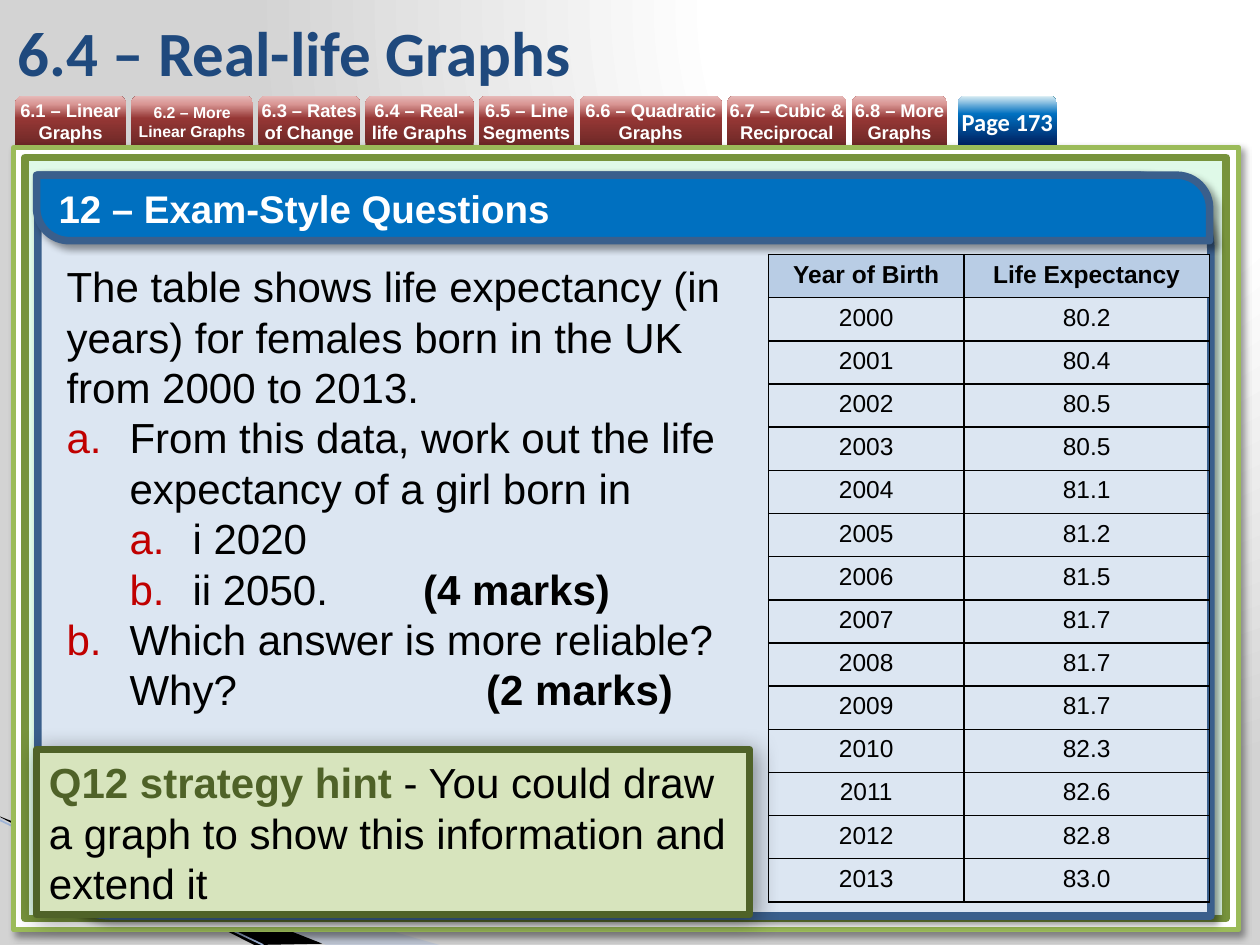
from lxml import etree
from pptx import Presentation
from pptx import util as u
from pptx.dml.color import RGBColor
from pptx.enum import shapes, text
from pptx.oxml import parse_xml
from pptx.oxml.ns import nsdecls, qn

WHITE = RGBColor(0xFF, 0xFF, 0xFF)
BLACK = RGBColor(0, 0, 0)
GREY = RGBColor(0xD3, 0xD3, 0xD3)
NAVY = RGBColor(0x1F, 0x49, 0x7D)
BLUE = RGBColor(0x00, 0x70, 0xC0)
EDGE_BLUE = RGBColor(0x3A, 0x5F, 0x8C)
PALE_BLUE = RGBColor(0xDC, 0xE6, 0xF2)
HEAD_BLUE = RGBColor(0xB9, 0xCD, 0xE5)
SWOOSH_BLUE = RGBColor(0xA7, 0xB9, 0xDB)
SWOOSH_EDGE = RGBColor(0x9E, 0xB3, 0xD6)
LIME = RGBColor(0x9B, 0xBB, 0x59)
OLIVE = RGBColor(0x77, 0x93, 0x3C)
MINT = RGBColor(0xDF, 0xF9, 0xE8)
HINT_FILL = RGBColor(0xD7, 0xE4, 0xBD)
HINT_EDGE = RGBColor(0x4F, 0x62, 0x28)
BULLET_RED = RGBColor(0xC0, 0, 0)
RED_STOPS = [(0, RGBColor(0x6F, 0x29, 0x27)), (54, RGBColor(0x95, 0x37, 0x35)),
             (83, RGBColor(0xD9, 0x96, 0x94)), (100, RGBColor(0xE6, 0xB9, 0xB8))]
BLUE_STOPS = [(0, RGBColor(0, 0x20, 0x60)), (63, BLUE), (100, RGBColor(0xDB, 0xEE, 0xF4))]
UPWARD = '<a:lin ang="16200000" scaled="0"/>'
FROM_TOP_RIGHT = '<a:path path="circle"><a:fillToRect l="65000" t="0" r="0" b="98000"/></a:path>'

KIND = shapes.MSO_SHAPE
MIDDLE = text.MSO_ANCHOR.MIDDLE
CENTER, LEFT = text.PP_ALIGN.CENTER, text.PP_ALIGN.LEFT

TAB_LEFT, TAB_TOP, TAB_HEIGHT, TAB_GAP = 0.12, 0.76, 0.39, 0.04
CHAPTER_TABS = [
    ("6.1 – Linear Graphs", 0.88, 10.5), ("6.2 – More Linear Graphs", 0.97, 9),
    ("6.3 – Rates of Change", 0.81, 10.5), ("6.4 – Real-life Graphs", 0.86, 10.5),
    ("6.5 – Line Segments", 0.76, 10.5), ("6.6 – Quadratic Graphs", 1.13, 10.5),
    ("6.7 – Cubic & Reciprocal", 0.95, 10.5), ("6.8 – More Graphs", 0.76, 10.5)]
# level (None for no number), tab stop, runs of (text, bold)
QUESTION = [
    (None, 5.44, [("The table shows life expectancy (in years) for females born "
                   "in the UK from 2000 to 2013.", False)]),
    (0, 5.44, [("From this data, work out the life expectancy of a girl born in", False)]),
    (1, 5.44, [("i 2020", False)]),
    (1, 5.94, [("ii 2050. \t", False), ("(4 marks)", True)]),
    (0, 5.94, [("Which answer is more reliable? \nWhy? \t", False), ("(2 marks)", True)])]
EXPECTANCY = [80.2, 80.4, 80.5, 80.5, 81.1, 81.2, 81.5,
              81.7, 81.7, 81.7, 82.3, 82.6, 82.8, 83.0]


def inches(*lengths):
    return [u.Inches(length) for length in lengths]


def apply(target, **formats):
    for name, value in formats.items():
        setattr(target, name, value)


def add_run(paragraph, words, size, color=BLACK, bold=False, name="Arial"):
    for index, line in enumerate(words.split("\n")):
        if index:
            paragraph.add_line_break()
        run = paragraph.add_run()
        run.text = line
        apply(run.font, size=u.Pt(size), bold=bold, name=name)
        run.font.color.rgb = color


def set_gradient(fill, holder, stops, direction):
    fill.solid()
    marks = "".join(f'<a:gs pos="{pos * 1000}"><a:srgbClr val="{color}"/></a:gs>'
                    for pos, color in stops)
    holder.replace(holder.find(qn("a:solidFill")), parse_xml(
        f'<a:gradFill {nsdecls("a")} rotWithShape="1"><a:gsLst>{marks}</a:gsLst>'
        f'{direction}</a:gradFill>'))


def add_shadow(shape, blur):
    shape._element.spPr.find(qn("a:effectLst")).append(parse_xml(
        f'<a:outerShdw {nsdecls("a")} blurRad="{u.Pt(blur)}" dist="{u.Pt(3)}" dir="2700000" '
        'algn="tl" rotWithShape="0"><a:srgbClr val="000000"><a:alpha val="40000"/>'
        '</a:srgbClr></a:outerShdw>'))


def add_panel(slide, kind, box, fill, edge, width, blur=None, corners=()):
    panel = slide.shapes.add_shape(kind, *inches(*box))
    panel.shadow.inherit = False
    panel.fill.solid()
    panel.fill.fore_color.rgb = fill
    panel.line.color.rgb = edge
    panel.line.width = u.Pt(width)
    for index, corner in enumerate(corners):
        panel.adjustments[index] = corner
    if blur:
        add_shadow(panel, blur)
    apply(panel.text_frame, word_wrap=True, vertical_anchor=MIDDLE)
    panel.text_frame.paragraphs[0].alignment = LEFT
    return panel


def add_tab(slide, left, width, label, size, stops, font="Arial"):
    tab = slide.shapes.add_shape(KIND.ROUND_2_SAME_RECTANGLE,
                                 *inches(left, TAB_TOP, width, TAB_HEIGHT))
    tab.shadow.inherit = False
    tab.line.fill.background()
    set_gradient(tab.fill, tab._element.spPr, stops, UPWARD)
    apply(tab.text_frame, word_wrap=True, vertical_anchor=MIDDLE, margin_left=0,
          margin_top=0, margin_right=0, margin_bottom=0)
    paragraph = tab.text_frame.paragraphs[0]
    paragraph.alignment = CENTER
    add_run(paragraph, label, size, WHITE, True, font)


def add_swoosh(slide, points, color, alpha):
    start, *others = [inches(*point) for point in points]
    builder = slide.shapes.build_freeform(*start)
    builder.add_line_segments(others)
    swoosh = builder.convert_to_shape()
    swoosh.shadow.inherit = False
    swoosh.line.fill.background()
    swoosh.fill.solid()
    swoosh.fill.fore_color.rgb = color
    tint = swoosh._element.spPr.find(qn("a:solidFill"))[0]
    etree.SubElement(tint, qn("a:alpha"), val=str(alpha * 1000))


def add_corner_decoration(slide):
    add_swoosh(slide, [(0, 6.5), (3.49, 7.5), (2.59, 7.5), (0, 6.49)], SWOOSH_BLUE, 40)
    add_swoosh(slide, [(0, 6.48), (2.56, 7.49), (2.02, 7.5), (0.01, 6.49)], BLACK, 100)
    rim = slide.shapes.add_connector(shapes.MSO_CONNECTOR.STRAIGHT,
                                     *inches(0, 6.51, 2.09, 7.5))
    rim.line.color.rgb = SWOOSH_EDGE
    rim.line.width = u.Pt(0.95)
    etree.SubElement(rim._element.spPr, qn("a:effectLst"))


def add_question(slide):
    frame = slide.shapes.add_textbox(*inches(0.43, 2.02, 5.51, 3.74)).text_frame
    frame.word_wrap = True
    for index, (level, stop, runs) in enumerate(QUESTION):
        paragraph = frame.add_paragraph() if index else frame.paragraphs[0]
        props = paragraph._p.get_or_add_pPr()
        if level is not None:
            paragraph.level = level
            props.set("marL", str(u.Inches(0.5 * (level + 1))))
            props.set("indent", str(u.Inches(-0.5)))
            color = etree.SubElement(props, qn("a:buClr"))
            etree.SubElement(color, qn("a:srgbClr"), val=str(BULLET_RED))
            etree.SubElement(props, qn("a:buAutoNum"), type="alphaLcPeriod")
        tabs = etree.SubElement(props, qn("a:tabLst"))
        etree.SubElement(tabs, qn("a:tab"), pos=str(u.Inches(stop)), algn="r")
        for words, bold in runs:
            add_run(paragraph, words, 24, bold=bold)


def add_borders(cell):
    props = cell._tc.get_or_add_tcPr()
    for index, side in enumerate(("lnL", "lnR", "lnT", "lnB")):
        props.insert(index, parse_xml(
            f'<a:{side} {nsdecls("a")} w="{u.Pt(1)}"><a:solidFill>'
            f'<a:srgbClr val="{BLACK}"/></a:solidFill></a:{side}>'))


def add_expectancy_table(slide):
    rows = [("Year of Birth", "Life Expectancy")]
    rows += [(str(2000 + i), f"{years:.1f}") for i, years in enumerate(EXPECTANCY)]
    table = slide.shapes.add_table(len(rows), 2, *inches(6.1, 2.02, 3.5, 5.14)).table
    apply(table, first_row=False, horz_banding=False)
    for column, width in zip(table.columns, inches(1.55, 1.95)):
        column.width = width
    margin = u.Inches(0.05)
    for r, row in enumerate(rows):
        for c, words in enumerate(row):
            cell = table.cell(r, c)
            apply(cell, margin_left=margin, margin_top=margin,
                  margin_right=margin, margin_bottom=margin)
            if r:
                cell.fill.background()
            else:
                cell.fill.solid()
                cell.fill.fore_color.rgb = HEAD_BLUE
            add_borders(cell)
            paragraph = cell.text_frame.paragraphs[0]
            paragraph.alignment = CENTER
            add_run(paragraph, words, 14, bold=r == 0)


def add_title(slide):
    title = slide.shapes.title
    left, top, width, height = inches(0.04, 0.05, 8.27, 0.71)
    apply(title, left=left, top=top, width=width, height=height)
    title.text_frame.vertical_anchor = MIDDLE
    paragraph = title.text_frame.paragraphs[0]
    paragraph.alignment = LEFT
    add_run(paragraph, "6.4 – Real-life Graphs", 36, NAVY, True, "Calibri")


def main():
    deck = Presentation()
    deck.slide_width, deck.slide_height = inches(10, 7.5)
    slide = deck.slides.add_slide(deck.slide_layouts[5])
    backdrop = slide.background.fill
    backdrop.solid()
    set_gradient(backdrop, slide.element.find(".//" + qn("p:bgPr")),
                 [(0, WHITE), (40, WHITE), (100, GREY)], FROM_TOP_RIGHT)
    add_title(slide)
    add_corner_decoration(slide)

    left = TAB_LEFT
    for label, width, size in CHAPTER_TABS:
        add_tab(slide, left, width, label, size, RED_STOPS)
        left += width + TAB_GAP
    add_panel(slide, KIND.RECTANGLE, (0.11, 1.17, 9.72, 6.21), WHITE, LIME, 3, 4)
    add_panel(slide, KIND.RECTANGLE, (0.2, 1.25, 9.53, 6.04), MINT, OLIVE, 4.33)
    add_tab(slide, left + TAB_GAP, 0.79, "Page 173", 14, BLUE_STOPS, "Calibri")

    diagonal = KIND.ROUND_2_DIAG_RECTANGLE
    add_panel(slide, diagonal, (0.3, 1.39, 9.31, 5.88), PALE_BLUE, EDGE_BLUE, 4.33, 4, (0, 0.1))
    heading = add_panel(slide, diagonal, (0.29, 1.39, 9.31, 0.52), BLUE, EDGE_BLUE, 4.33, 4, (0, 0.5))
    add_run(heading.text_frame.paragraphs[0], "12 – Exam-Style Questions", 22, WHITE, True)
    add_question(slide)
    hint = add_panel(slide, KIND.RECTANGLE, (0.29, 5.95, 5.66, 1.31), HINT_FILL, HINT_EDGE, 4.33, 13)
    advice = hint.text_frame.paragraphs[0]
    add_run(advice, "Q12 strategy hint ", 24, HINT_EDGE, True)
    add_run(advice, "- You could draw a graph to show this information and extend it", 24)
    add_expectancy_table(slide)
    deck.save("out.pptx")


if __name__ == "__main__":
    main()
